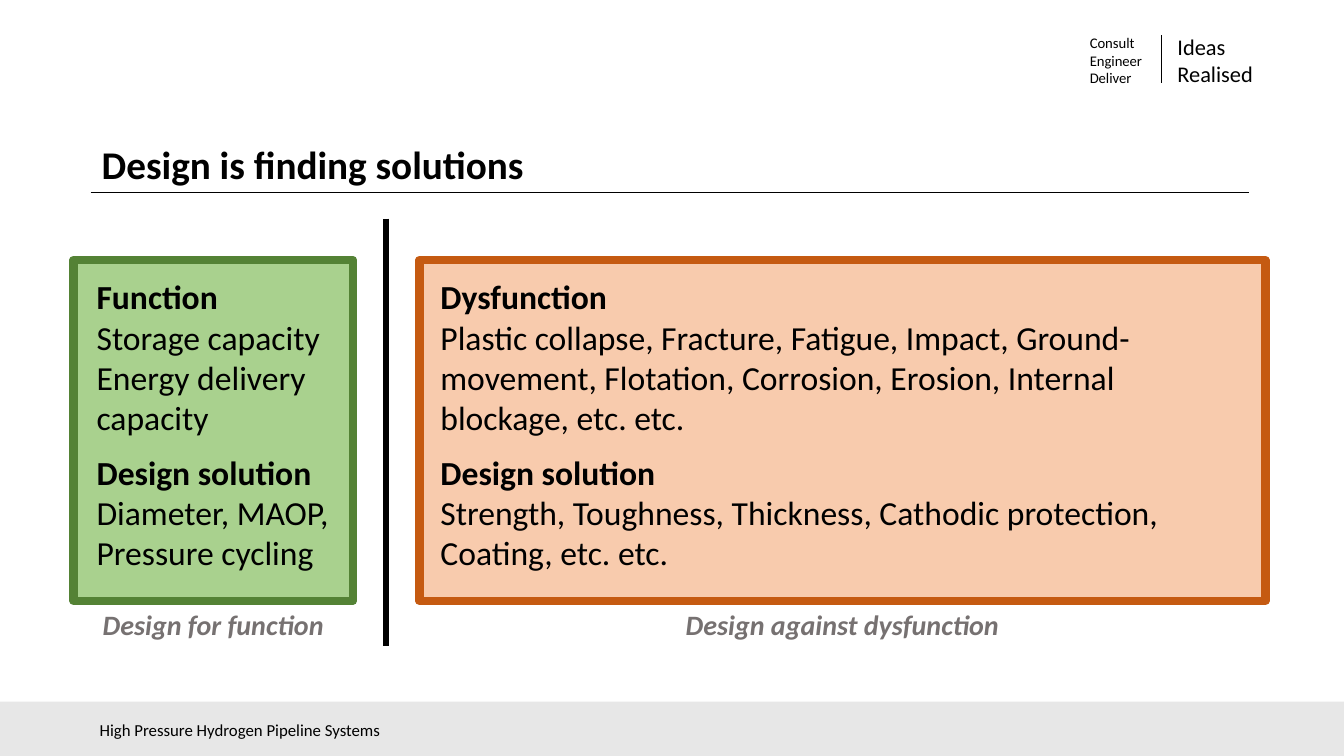
from lxml.etree import SubElement
from pptx import Presentation
from pptx.dml.color import RGBColor
from pptx.enum.shapes import MSO_CONNECTOR, MSO_SHAPE
from pptx.enum.text import MSO_ANCHOR, PP_ALIGN
from pptx.oxml.ns import qn
from pptx.util import Inches, Pt

COLORS = {
    "black": "000000",
    "caption": "767171",
    "footer": "E7E7E7",
    "green": "A9D18E",
    "green_edge": "548235",
    "orange": "F8CBAD",
    "orange_edge": "C55A11",
}
PANEL_TOP, PANEL_HEIGHT = 2.58, 3.38
CAPTION_TOP = 5.98

# Each panel: left, width, text left, text width, fill, edge, caption, sections
PANELS = [
    (0.73, 2.77, 0.86, 2.64, "green", "green_edge", "Design for function", [
        ["Function", "Storage capacity", "Energy delivery capacity"],
        ["Design solution", "Diameter, MAOP,", "Pressure cycling"],
    ]),
    (4.16, 8.39, 4.27, 8.07, "orange", "orange_edge", "Design against dysfunction", [
        ["Dysfunction",
         "Plastic collapse, Fracture, Fatigue, Impact, Ground-movement, "
         "Flotation, Corrosion, Erosion, Internal blockage, etc. etc."],
        ["Design solution",
         "Strength, Toughness, Thickness, Cathodic protection, "
         "Coating, etc. etc."],
    ]),
]
SECTION_BOXES = [(2.69, 1.72), (4.43, 1.31)]  # top, height


def rgb(name):
    return RGBColor.from_string(COLORS[name])


def add_rule(slide, start, end, weight):
    rule = slide.shapes.add_connector(
        MSO_CONNECTOR.STRAIGHT, *map(Inches, start + end))
    rule.line.color.rgb = rgb("black")
    rule.line.width = Pt(weight)
    SubElement(rule._element.spPr, qn("a:effectLst"))


def add_block(slide, box, fill, edge=None):
    block = slide.shapes.add_shape(MSO_SHAPE.RECTANGLE, *map(Inches, box))
    block.shadow.inherit = False
    block.fill.solid()
    block.fill.fore_color.rgb = rgb(fill)
    if edge:
        block.line.color.rgb = rgb(edge)
        block.line.width = Pt(6)
        SubElement(block.line._get_or_add_ln(), qn("a:round"))
    else:
        block.line.fill.background()


def add_text(slide, box, lines, size, color="black", anchor=MSO_ANCHOR.TOP,
             align=PP_ALIGN.LEFT, spacing=None, heading=False, **styles):
    """Write one paragraph per line; heading makes the first one bold."""
    frame = slide.shapes.add_textbox(*map(Inches, box)).text_frame
    frame.word_wrap = True
    frame.vertical_anchor = anchor
    font_values = {"name": "Calibri", "size": Pt(size), **styles}
    for index, line in enumerate(lines):
        paragraph = frame.add_paragraph() if index else frame.paragraphs[0]
        paragraph.alignment = align
        paragraph.line_spacing = spacing
        run = paragraph.add_run()
        run.text = line
        for attribute, value in font_values.items():
            setattr(run.font, attribute, value)
        if heading:
            run.font.bold = index == 0
        run.font.color.rgb = rgb(color)


def add_panel(slide, left, width, text_left, text_width, fill, edge,
              caption, sections):
    add_block(slide, (left, PANEL_TOP, width, PANEL_HEIGHT), fill, edge)
    for (top, height), lines in zip(SECTION_BOXES, sections):
        add_text(slide, (text_left, top, text_width, height), lines, 24,
                 heading=True)
    add_text(slide, (left, CAPTION_TOP, width, 0.44), [caption], 20, "caption",
             align=PP_ALIGN.CENTER, bold=True, italic=True)


def main():
    deck = Presentation()
    deck.slide_width, deck.slide_height = Inches(13.33), Inches(7.5)
    slide = deck.slides.add_slide(deck.slide_layouts[6])

    # Header tagline
    add_text(slide, (10.71, 0.4, 1.12, 0.4), ["Consult", "Engineer", "Deliver"],
             10.5, anchor=MSO_ANCHOR.MIDDLE)
    add_rule(slide, (11.52, 0.35), (11.52, 0.82), 0.5)
    add_text(slide, (11.58, 0.31, 1.13, 0.57), ["Ideas", "Realised"], 16,
             anchor=MSO_ANCHOR.MIDDLE)

    # Title
    add_text(slide, (0.91, 1.38, 9.71, 0.53), ["Design is finding solutions"],
             28, anchor=MSO_ANCHOR.BOTTOM, spacing=0.9, bold=True)
    add_rule(slide, (0.9, 1.91), (12.39, 1.91), 0.5)

    # Function and dysfunction panels with their divider
    for panel in PANELS:
        add_panel(slide, *panel)
    add_rule(slide, (3.83, 2.17), (3.83, 6.41), 4.5)

    # Footer
    add_block(slide, (0, 6.96, 13.33, 0.54), "footer")
    add_text(slide, (0.89, 7.11, 4.04, 0.29),
             ["High Pressure Hydrogen Pipeline Systems"], 12, spacing=0.9)

    deck.save("out.pptx")


if __name__ == "__main__":
    main()
